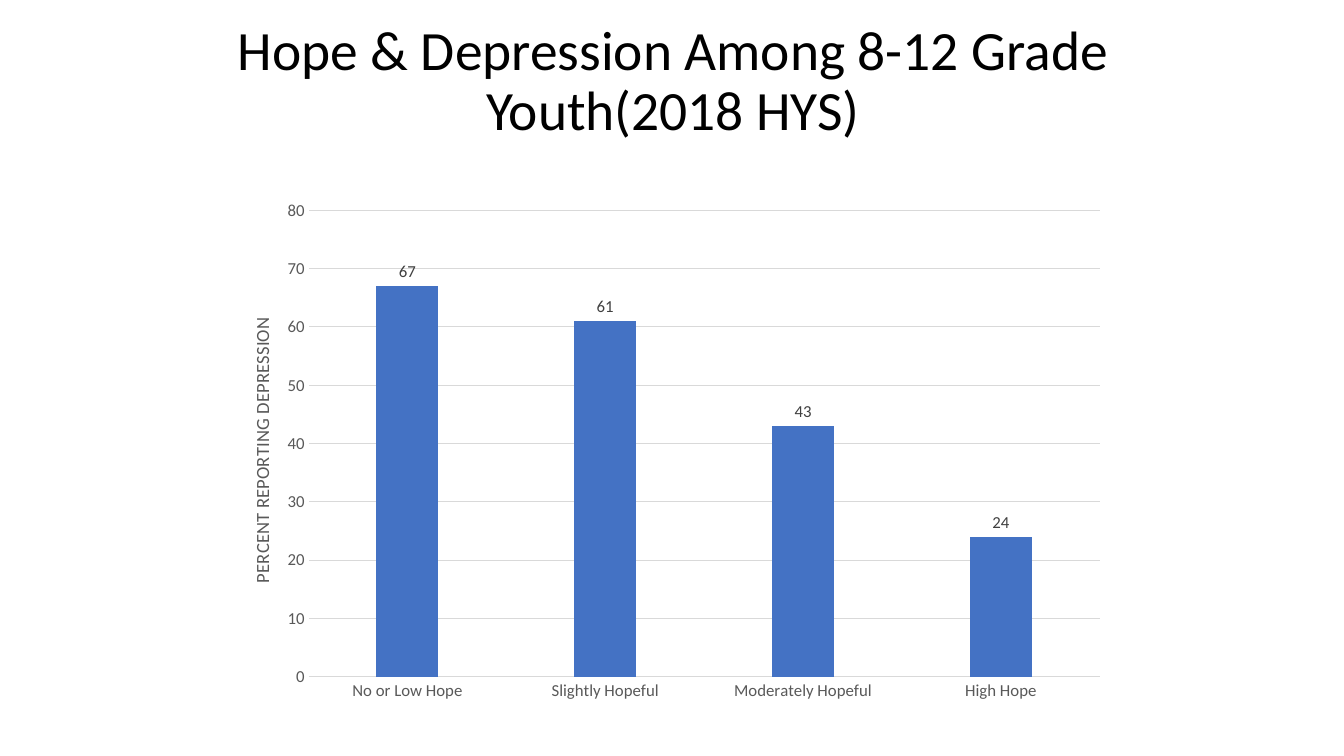
"""Build the slide on hope and depression among youth."""
from lxml.etree import SubElement
from pptx import Presentation
from pptx.chart.data import CategoryChartData
from pptx.dml.color import RGBColor
from pptx.enum.chart import XL_CHART_TYPE as ChartType
from pptx.enum.chart import XL_LABEL_POSITION as LabelPosition
from pptx.enum.chart import XL_TICK_MARK as TickMark
from pptx.enum.text import MSO_ANCHOR as Anchor
from pptx.enum.text import PP_ALIGN as Align
from pptx.oxml.ns import qn
from pptx.util import Cm, Pt


def color(value):
    return RGBColor.from_string(value)


def place(parent, index, **fractions):
    for old in parent.findall(qn("c:layout")):
        parent.remove(old)
    layout = SubElement(parent, qn("c:layout"))
    parent.insert(index, layout)
    manual = SubElement(layout, qn("c:manualLayout"))
    if "w" in fractions:
        SubElement(manual, qn("c:layoutTarget")).set("val", "inner")
    for side in ("x", "y"):
        SubElement(manual, qn(f"c:{side}Mode")).set("val", "edge")
    for name, fraction in fractions.items():
        SubElement(manual, qn(f"c:{name}")).set("val", str(fraction))


class SlideBuilder:
    font_name = "Calibri"
    black, dark, gray = "000000", "404040", "595959"
    rule, bar = "D9D9D9", "4472C4"

    def __init__(self, slide):
        self.slide = slide

    def style(self, font, size, tone):
        font.name = self.font_name
        font.size = Pt(size)
        font.bold = False
        font.color.rgb = color(tone)

    def rule_line(self, line):
        line.color.rgb = color(self.rule)
        line.width = Pt(0.75)

    def title(self, text, left, top, width, height):
        box = self.slide.shapes.add_textbox(Cm(left), Cm(top), Cm(width), Cm(height))
        frame = box.text_frame
        frame.word_wrap = True
        frame.vertical_anchor = Anchor.MIDDLE
        frame.text = text
        para = frame.paragraphs[0]
        para.alignment = Align.CENTER
        para.line_spacing = 0.9
        self.style(para.runs[0].font, 39.6, self.black)

    def column_chart(self, values, axis_label, left, top, width, height):
        data = CategoryChartData()
        data.categories = list(values)
        data.add_series("Series 1", list(values.values()))
        chart = self.slide.shapes.add_chart(
            ChartType.COLUMN_CLUSTERED, Cm(left), Cm(top), Cm(width), Cm(height), data
        ).chart
        chart.has_legend = False
        chart.has_title = False
        self.style(chart.font, 10, self.black)
        self.columns(chart.plots[0])
        self.axes(chart, axis_label)
        plot_area = chart.element.find(".//" + qn("c:plotArea"))
        place(plot_area, 0, x=0.1, y=0.04, w=0.88, h=0.9)

    def columns(self, plot):
        plot.gap_width = 219
        plot.overlap = -27
        plot.vary_by_categories = False
        fill = plot.series[0].format.fill
        fill.solid()
        fill.fore_color.rgb = color(self.bar)
        plot.has_data_labels = True
        labels = plot.data_labels
        labels.show_value = True
        labels.position = LabelPosition.OUTSIDE_END
        self.style(labels.font, 12, self.dark)

    def axes(self, chart, label):
        category, value = chart.category_axis, chart.value_axis
        for axis in (category, value):
            axis.major_tick_mark = axis.minor_tick_mark = TickMark.NONE
            self.style(axis.tick_labels.font, 12, self.gray)
        self.rule_line(category.format.line)
        value.format.line.fill.background()
        value.minimum_scale, value.maximum_scale, value.major_unit = 0, 80, 10
        value.has_major_gridlines = True
        self.rule_line(value.major_gridlines.format.line)
        frame = value.axis_title.text_frame
        frame.text = label
        self.style(frame.paragraphs[0].runs[0].font, 13.3, self.gray)
        place(value.axis_title.element, 1, x=0.03, y=0.24)


def main():
    deck = Presentation()
    deck.slide_width, deck.slide_height = Cm(33.87), Cm(19.05)
    page = SlideBuilder(deck.slides.add_slide(deck.slide_layouts[6]))
    page.title("Hope & Depression Among 8-12 Grade Youth(2018 HYS)", 5.51, 0.36, 22.91, 3.45)
    depression = {
        "No or Low Hope": 67,
        "Slightly Hopeful": 61,
        "Moderately Hopeful": 43,
        "High Hope": 24,
    }
    page.column_chart(depression, "PERCENT REPORTING DEPRESSION", 5.51, 4.78, 22.66, 13.06)
    deck.save("out.pptx")


if __name__ == "__main__":
    main()
